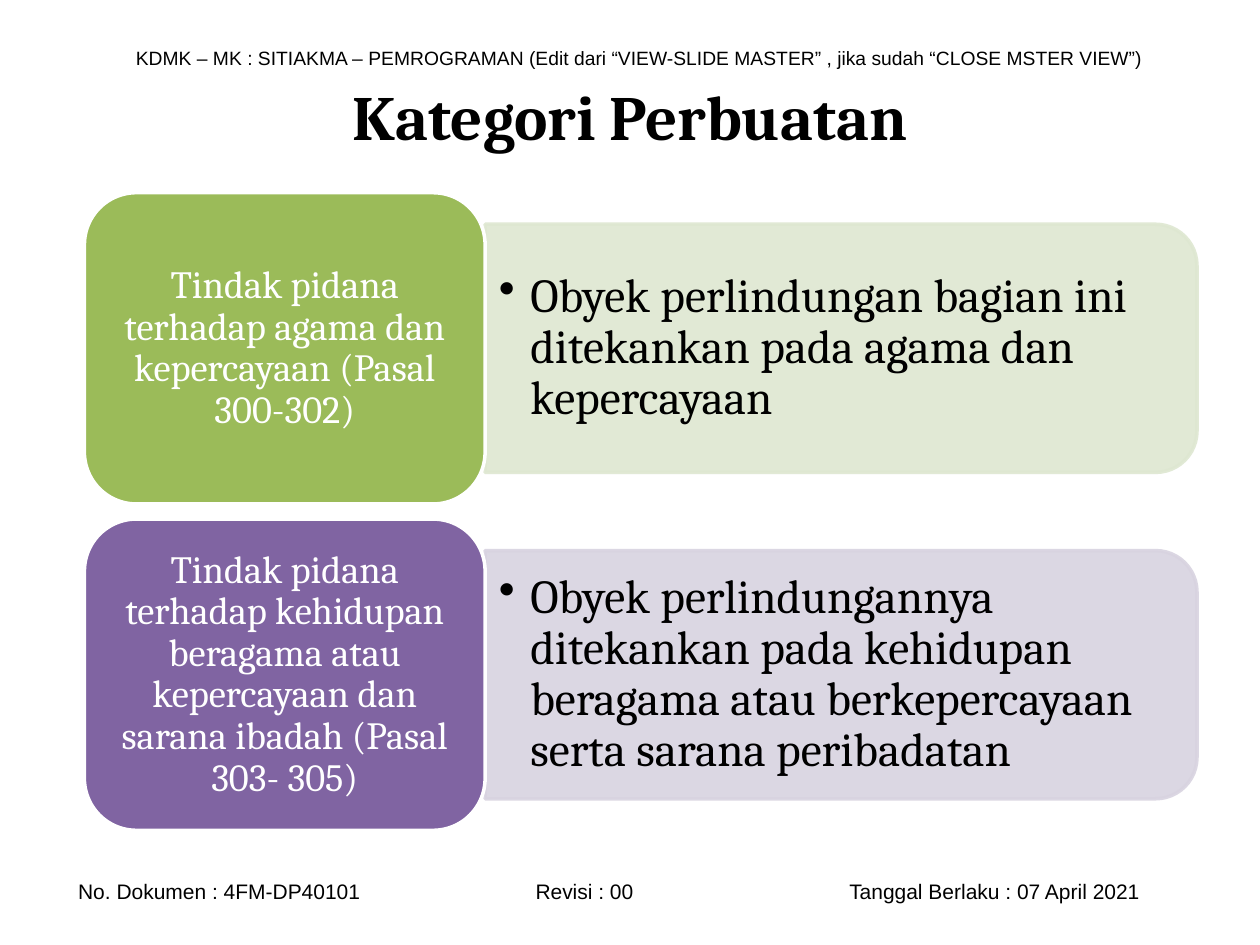
"""Build the "Kategori Perbuatan" slide: two offence categories with their protected objects."""
from lxml import etree
from pptx import Presentation
from pptx import util as u
from pptx.dml.color import RGBColor
from pptx.enum import shapes, text
from pptx.oxml.ns import qn

COLORS = {"black": "000000", "white": "FFFFFF",
          "green": "9BBB59", "pale_green": "DEE7D1",
          "purple": "8064A2", "pale_purple": "D8D3E0"}

HEADER = ("KDMK – MK : SITIAKMA – PEMROGRAMAN (Edit dari “VIEW-SLIDE MASTER” , "
          "jika sudah “CLOSE MSTER VIEW”)")
FOOTER = "No. Dokumen : 4FM-DP40101\tRevisi : 00\tTanggal Berlaku : 07 April 2021"
CATEGORIES = [
    ("green", "Tindak pidana terhadap agama dan kepercayaan (Pasal 300-302)",
     "Obyek perlindungan bagian ini ditekankan pada agama dan kepercayaan"),
    ("purple", "Tindak pidana terhadap kehidupan beragama atau kepercayaan "
               "dan sarana ibadah (Pasal 303- 305)",
     "Obyek perlindungannya ditekankan pada kehidupan beragama atau "
     "berkepercayaan serta sarana peribadatan"),
]

TILE_LEFT, TILE_TOP, TILE_WIDTH, TILE_HEIGHT = 0.67, 1.53, 3.18, 2.47
ROW_STEP = 2.59
PANEL_WIDTH, PANEL_HEIGHT = 5.65, 1.97
OBJECT_WIDTH, OBJECT_HEIGHT = 5.56, 1.78


def color(name):
    return RGBColor.from_string(COLORS[name])


def write(shape, wording, ink="black", align=text.PP_ALIGN.LEFT, spacing=None,
          margins=(0.1, 0.05), bullet=False, tabs=(), **font_format):
    """Put one formatted paragraph into a shape, centred vertically."""
    frame = shape.text_frame
    across, down = map(u.Inches, margins)
    frame_format = {"word_wrap": True, "vertical_anchor": text.MSO_ANCHOR.MIDDLE,
                    "margin_left": across, "margin_right": across,
                    "margin_top": down, "margin_bottom": down}
    for name, value in frame_format.items():
        setattr(frame, name, value)
    paragraph = frame.paragraphs[0]
    paragraph.text = wording
    paragraph.alignment = align
    properties = paragraph._p.get_or_add_pPr()
    if bullet:
        properties.set("marL", str(u.Inches(0.25)))
        properties.set("indent", str(u.Inches(-0.25)))
        etree.SubElement(properties, qn("a:buChar"), char="•")
    if tabs:
        stops = etree.SubElement(properties, qn("a:tabLst"))
        for position in tabs:
            etree.SubElement(stops, qn("a:tab"), pos=str(u.Inches(position)), algn="l")
    if spacing:
        paragraph.line_spacing = spacing
    for name, value in font_format.items():
        setattr(paragraph.font, name, value)
    paragraph.font.color.rgb = color(ink)


def add_label(slide, box, wording, **options):
    """Add a text box holding one paragraph."""
    write(slide.shapes.add_textbox(*map(u.Inches, box)), wording, **options)


def add_block(slide, kind, box, fill, outline):
    """Add a filled preset shape with a two-point outline."""
    block = slide.shapes.add_shape(kind, *map(u.Inches, box))
    block.shadow.inherit = False
    block.fill.solid()
    block.fill.fore_color.rgb = color(fill)
    block.line.color.rgb = color(outline)
    block.line.width = u.Pt(2)
    return block


def add_panel(slide, left, middle, tint):
    """Add a translucent panel, turned so that its round corners face right."""
    box = (left + (PANEL_WIDTH - PANEL_HEIGHT) / 2, middle - PANEL_WIDTH / 2,
           PANEL_HEIGHT, PANEL_WIDTH)
    panel = add_block(slide, shapes.MSO_SHAPE.ROUND_2_SAME_RECTANGLE, box, tint, tint)
    panel.rotation = 90
    for tone in panel._element.spPr.iter(qn("a:srgbClr")):
        etree.SubElement(tone, qn("a:alpha"), val="90000")


def add_category(slide, top, hue, category, protected_object):
    """Add one row: a category tile and the panel with its protected object."""
    middle = top + TILE_HEIGHT / 2
    panel_left = TILE_LEFT + TILE_WIDTH
    add_panel(slide, panel_left, middle, f"pale_{hue}")
    add_label(slide, (panel_left, middle - OBJECT_HEIGHT / 2, OBJECT_WIDTH, OBJECT_HEIGHT),
              protected_object, spacing=0.9, margins=(0.11, 0.06), bullet=True,
              name="Cambria", size=u.Pt(27))
    tile = add_block(slide, shapes.MSO_SHAPE.ROUNDED_RECTANGLE,
                     (TILE_LEFT, top, TILE_WIDTH, TILE_HEIGHT), hue, "white")
    write(tile, category, ink="white", align=text.PP_ALIGN.CENTER, spacing=0.9,
          margins=(0.09, 0.05), name="Cambria", size=u.Pt(22))


def main():
    deck = Presentation()
    deck.slide_width, deck.slide_height = u.Inches(10), u.Inches(7.5)
    slide = deck.slides.add_slide(deck.slide_layouts[6])
    add_label(slide, (0.98, 0.31, 8.35, 0.29), HEADER, align=text.PP_ALIGN.JUSTIFY,
              name="Arial", size=u.Pt(11))
    add_label(slide, (0.2, 6.92, 9.45, 0.3), FOOTER, margins=(0.42, 0.05),
              tabs=(3.63, 6.12), name="Arial", size=u.Pt(12))
    add_label(slide, (0.5, 0.29, 9, 1.25), "Kategori Perbuatan",
              align=text.PP_ALIGN.CENTER, name="Cambria", size=u.Pt(36), bold=True)
    for row, category in enumerate(CATEGORIES):
        add_category(slide, TILE_TOP + row * ROW_STEP, *category)
    deck.save("out.pptx")


if __name__ == "__main__":
    main()
